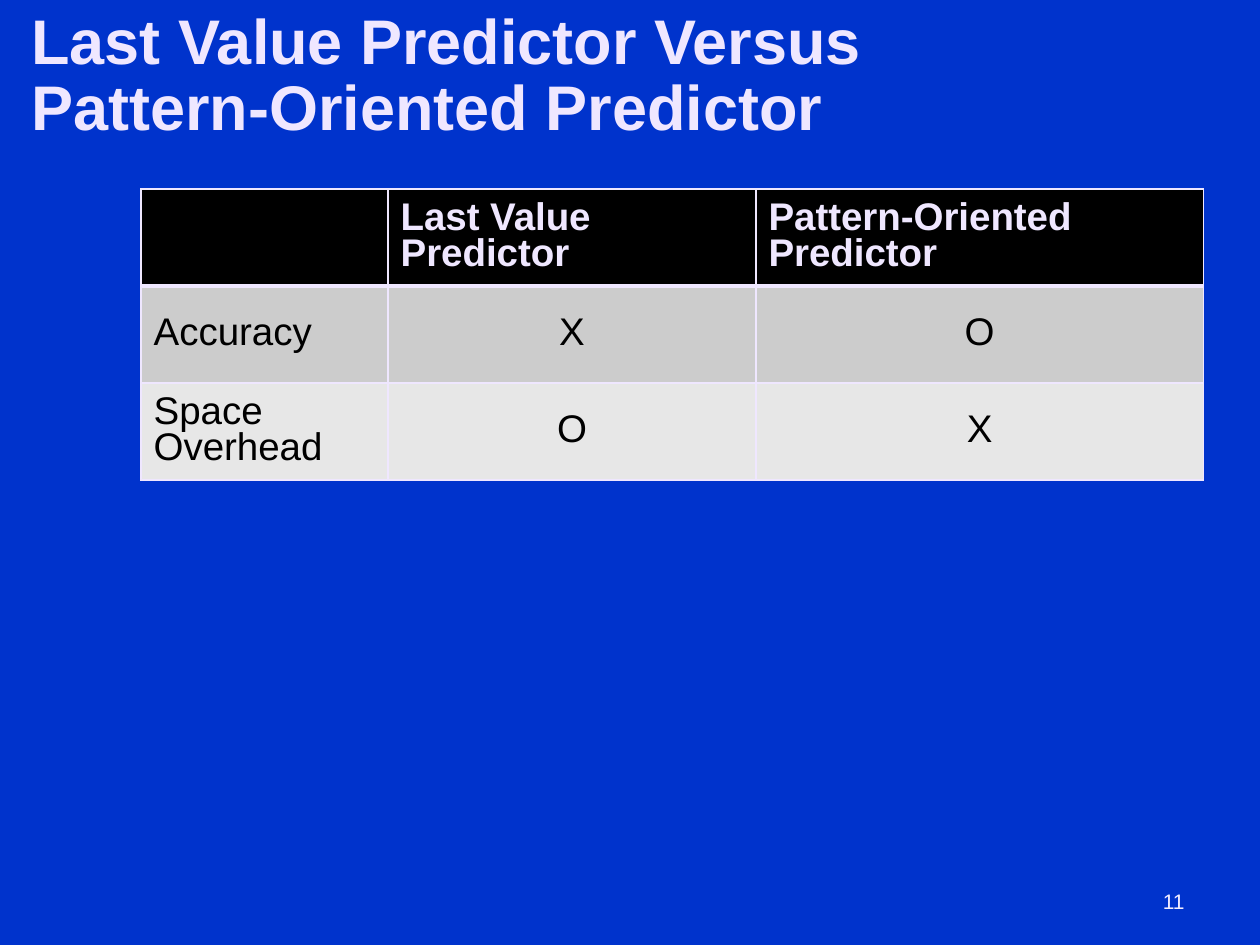
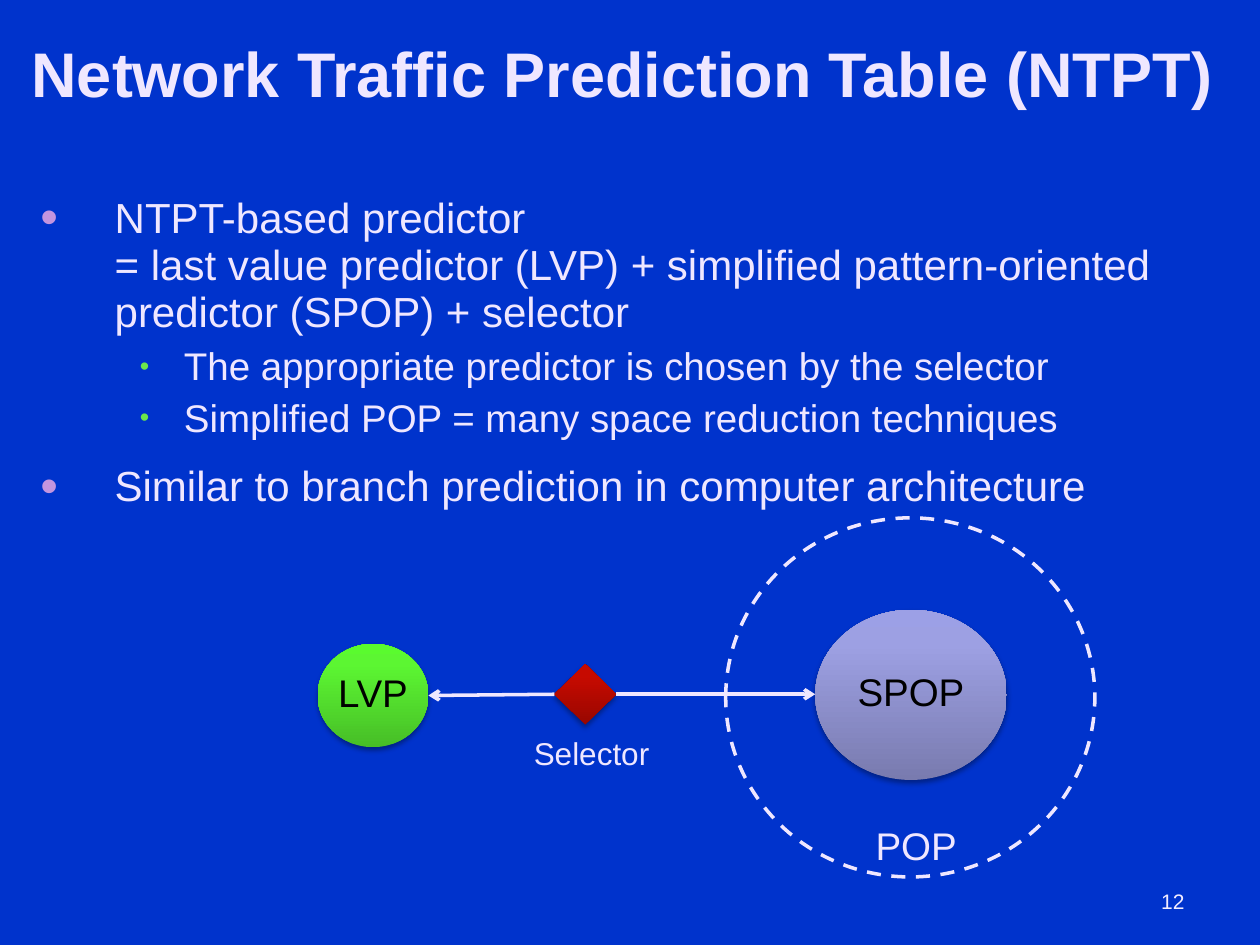
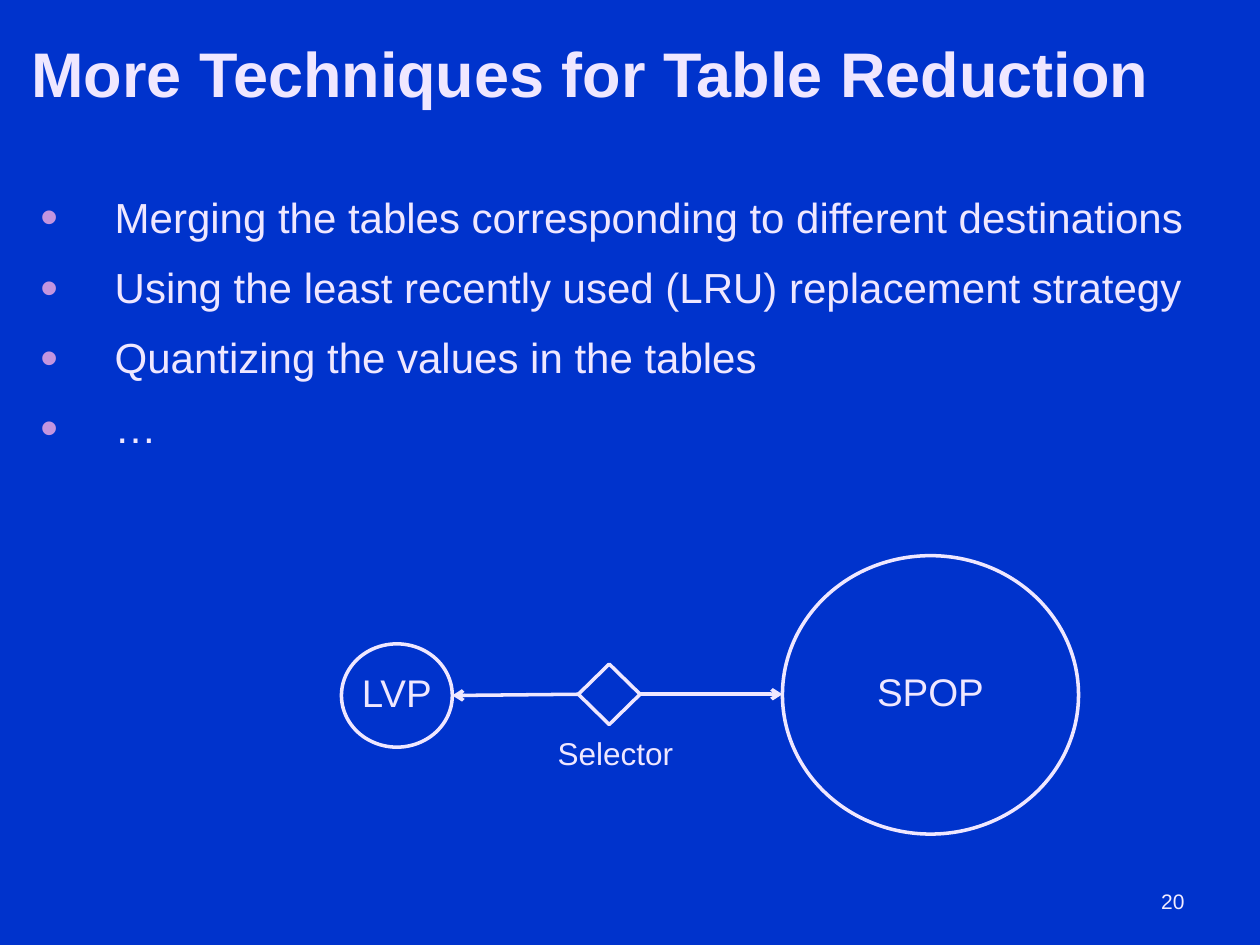
from copy import deepcopy

from pptx import Presentation
from pptx.dml.color import RGBColor
from pptx.enum.dml import MSO_LINE
from pptx.enum.shapes import MSO_CONNECTOR, MSO_SHAPE
from pptx.enum.text import MSO_ANCHOR, MSO_AUTO_SIZE, PP_ALIGN
from pptx.oxml import parse_xml
from pptx.oxml.ns import nsdecls, qn
from pptx.util import Inches, Pt

# Shared look
FONT = "Arial"
BACK, INK, PAGE_INK, BLACK = "0033CC", "EFE7FF", "F3EDFF", "000000"
LEFT, CENTER, RIGHT = PP_ALIGN.LEFT, PP_ALIGN.CENTER, PP_ALIGN.RIGHT
TOP, MIDDLE = MSO_ANCHOR.TOP, MSO_ANCHOR.MIDDLE
TITLE_ONLY, TITLE_AND_BODY = 5, 1

# Per list level: text size, line spacing, space before, indent, hang, bullet colour, bullet %
LEVELS = [
    dict(size=24, spacing=0.94, before=13, bullet=(0.59, 0.59, "C395DF", 120)),
    dict(size=22, spacing=0.89, before=6, bullet=(1.14, 0.35, "6CE74B", 70)),
]

# Content
COMPARISON = [
    ["", "Last Value Predictor", "Pattern-Oriented Predictor"],
    ["Accuracy", "X", "O"],
    ["Space Overhead", "O", "X"],
]
COLUMN_WIDTHS = [1.96, 2.92, 3.55]
ROW_HEIGHT = 0.77
ROW_FILLS = [BLACK, "CCCCCC", "E7E7E7"]

NTPT_POINTS = [
    (0, "NTPT-based predictor\n= last value predictor (LVP) + simplified "
        "pattern-oriented predictor (SPOP) + selector"),
    (1, "The appropriate predictor is chosen by the selector"),
    (1, "Simplified POP = many space reduction techniques"),
    (0, "Similar to branch prediction in computer architecture"),
]
REDUCTION_POINTS = [
    (0, "Merging the tables corresponding to different destinations"),
    (0, "Using the least recently used (LRU) replacement strategy"),
    (0, "Quantizing the values in the tables"),
    (0, "…"),
]

# Gradient stops at 0, 80 and 100 %, from bottom to top
GRADIENTS = {
    "LVP": ("47BE27", "5CF632", "5AFB2E"),
    "SPOP": ("797BAF", "9DA0E3", "9CA0E6"),
    "Selector": ("980700", "C60A00", "C70A00"),
}


def rgb(color):
    return RGBColor.from_string(color)


def element(xml):
    head, rest = xml.split(">", 1) if "/>" not in xml.split(">", 1)[0] + ">" else (xml[:-2], None)
    tail = "/>" if rest is None else ">" + rest
    return parse_xml(f"{head} {nsdecls('a')}{tail}")


def add_text(tf, text, size=22, color=INK, bold=False, align=LEFT,
             spacing=0.85, before=0, level=0, bullet=None):
    """Append a paragraph; the empty first one is used before any is added."""
    first = not tf.text
    p = tf.paragraphs[0] if first else tf.add_paragraph()
    p.text = text.replace("\n", "\v")
    p.level, p.alignment, p.line_spacing = level, align, spacing
    p.space_before = Pt(0 if first else before)
    if bullet:
        indent, hang, bullet_color, percent = bullet
        pPr = p._p.get_or_add_pPr()
        pPr.set("marL", str(Inches(indent)))
        pPr.set("indent", str(-Inches(hang)))
        for xml in (f'<a:buClr><a:srgbClr val="{bullet_color}"/></a:buClr>',
                    f'<a:buSzPct val="{percent * 1000}"/>',
                    f'<a:buFont typeface="{FONT}"/>',
                    '<a:buChar char="•"/>'):
            pPr.append(element(xml))
    for r in p.runs:
        r.font.name, r.font.size, r.font.bold = FONT, Pt(size), bold
        r.font.color.rgb = rgb(color)
    # A line break keeps the size of the text around it
    for br in p._p.findall(qn("a:br")):
        br.insert(0, deepcopy(p.runs[0]._r.rPr))


def set_frame(s, anchor=TOP, wrap=True, insets=(0.1, 0.05)):
    tf = s.text_frame
    tf.auto_size, tf.word_wrap, tf.vertical_anchor = MSO_AUTO_SIZE.NONE, wrap, anchor
    tf.margin_left = tf.margin_right = Inches(insets[0])
    tf.margin_top = tf.margin_bottom = Inches(insets[1])
    return tf


def place(s, *box):
    s.left, s.top, s.width, s.height = map(Inches, box)


def add_label(slide, box, text, anchor=TOP, wrap=False, **fmt):
    tb = slide.shapes.add_textbox(*map(Inches, box))
    add_text(set_frame(tb, anchor, wrap), text, **fmt)


def add_slide(prs, layout, title, number, title_width=9.4):
    slide = prs.slides.add_slide(prs.slide_layouts[layout])
    place(slide.shapes.title, 0.25, 0.27, title_width, 0.7)
    add_text(set_frame(slide.shapes.title, MIDDLE, insets=(0, 0)), title,
             size=36, bold=True, spacing=0.87)
    add_label(slide, (7.17, 6.95, 2.33, 0.4), str(number), MIDDLE, True,
              size=12, color=PAGE_INK, align=RIGHT, spacing=1.0)
    return slide


def add_points(slide, points):
    body = slide.placeholders[1]
    place(body, 0.22, 1.5, 9.33, 5.55)
    tf = set_frame(body)
    for level, text in points:
        add_text(tf, text, level=level, **LEVELS[level])


def add_comparison(slide):
    rows, cols = len(COMPARISON), len(COLUMN_WIDTHS)
    table = slide.shapes.add_table(
        rows, cols, Inches(1.12), Inches(1.5),
        Inches(sum(COLUMN_WIDTHS)), Inches(rows * ROW_HEIGHT)).table
    table.first_row = table.horz_banding = False
    for column, width in zip(table.columns, COLUMN_WIDTHS):
        column.width = Inches(width)
    for i, texts in enumerate(COMPARISON):
        table.rows[i].height = Inches(ROW_HEIGHT)
        # The rule under the header row is thicker
        widths = dict(L=1, R=1, T=3 if i == 1 else 1, B=3 if i == 0 else 1)
        for j, text in enumerate(texts):
            cell = table.cell(i, j)
            cell.vertical_anchor = MIDDLE
            tcPr = cell._tc.get_or_add_tcPr()
            for side, width in widths.items():
                tcPr.append(element(
                    f'<a:ln{side} w="{Pt(width)}"><a:solidFill><a:srgbClr val="{INK}"/>'
                    f'</a:solidFill></a:ln{side}>'))
            cell.fill.solid()
            cell.fill.fore_color.rgb = rgb(ROW_FILLS[i])
            add_text(cell.text_frame, text, bold=i == 0,
                     color=BLACK if i else INK, align=CENTER if i and j else LEFT)


def add_node(slide, kind, box, text="", gradient=None, dash=None):
    """A shaded shape when a gradient is given, otherwise an outline."""
    s = slide.shapes.add_shape(kind, *map(Inches, box))
    s.shadow.inherit = False
    if gradient:
        s.line.fill.background()
        stops = "".join(f'<a:gs pos="{pos}000"><a:srgbClr val="{color}"/></a:gs>'
                        for pos, color in zip((0, 80, 100), gradient))
        spPr = s._element.spPr
        spPr.find(qn("a:prstGeom")).addnext(element(
            f'<a:gradFill><a:gsLst>{stops}</a:gsLst><a:lin ang="16200000"/></a:gradFill>'))
        spPr.find(qn("a:effectLst")).append(element(
            f'<a:outerShdw blurRad="{Pt(3.1)}" dist="{Pt(1.8)}" dir="5400000">'
            '<a:srgbClr val="000000"><a:alpha val="35000"/></a:srgbClr></a:outerShdw>'))
    else:
        s.fill.background()
        s.line.color.rgb, s.line.width = rgb(INK), Pt(2)
        if dash:
            s.line.dash_style = dash
    if text:
        add_text(set_frame(s, MIDDLE, wrap=False), text,
                 color=BLACK if gradient else INK, align=CENTER)


def add_arrow(slide, *ends):
    c = slide.shapes.add_connector(MSO_CONNECTOR.STRAIGHT, *map(Inches, ends))
    c.line.color.rgb, c.line.width = rgb(INK), Pt(2)
    spPr = c._element.spPr
    spPr.find(qn("a:ln")).append(element('<a:tailEnd type="arrow"/>'))
    spPr.append(element("<a:effectLst/>"))


def add_selector_diagram(slide, left, spop_box, gradients):
    """LVP and SPOP on either side of the selector diamond."""
    lvp_right, diamond_left, diamond_right = left + 0.88, left + 1.88, left + 2.37
    add_node(slide, MSO_SHAPE.OVAL, (left, 5.11, 0.88, 0.82), "LVP", gradients.get("LVP"))
    add_node(slide, MSO_SHAPE.OVAL, spop_box, "SPOP", gradients.get("SPOP"))
    add_node(slide, MSO_SHAPE.DIAMOND, (diamond_left, 5.27, 0.49, 0.48),
             gradient=gradients.get("Selector"))
    add_arrow(slide, diamond_right, 5.51, spop_box[0], 5.51)
    add_arrow(slide, diamond_left, 5.51, lvp_right, 5.52)
    add_label(slide, (left + 1.61, 5.82, 1.13, 0.36), "Selector", size=18, align=CENTER)


def main():
    prs = Presentation()
    prs.slide_width, prs.slide_height = Inches(10), Inches(7.5)
    fill = prs.slide_master.background.fill
    fill.solid()
    fill.fore_color.rgb = rgb(BACK)

    # Predictor comparison
    slide = add_slide(prs, TITLE_ONLY,
                      "Last Value Predictor Versus\nPattern-Oriented Predictor", 11)
    add_comparison(slide)

    # Prediction table, with the full POP ringed around the simplified one
    slide = add_slide(prs, TITLE_AND_BODY, "Network Traffic Prediction Table (NTPT)", 12, 9.75)
    add_points(slide, NTPT_POINTS)
    add_selector_diagram(slide, 2.52, (6.47, 4.84, 1.52, 1.35), GRADIENTS)
    add_node(slide, MSO_SHAPE.OVAL, (5.76, 4.11, 2.93, 2.85), dash=MSO_LINE.DASH)
    add_label(slide, (6.85, 6.53, 0.85, 0.42), "POP")

    # Table reduction
    slide = add_slide(prs, TITLE_AND_BODY, "More Techniques for Table Reduction", 20)
    add_points(slide, REDUCTION_POINTS)
    add_selector_diagram(slide, 2.71, (6.21, 4.41, 2.35, 2.21), {})

    prs.save("out.pptx")


if __name__ == "__main__":
    main()
